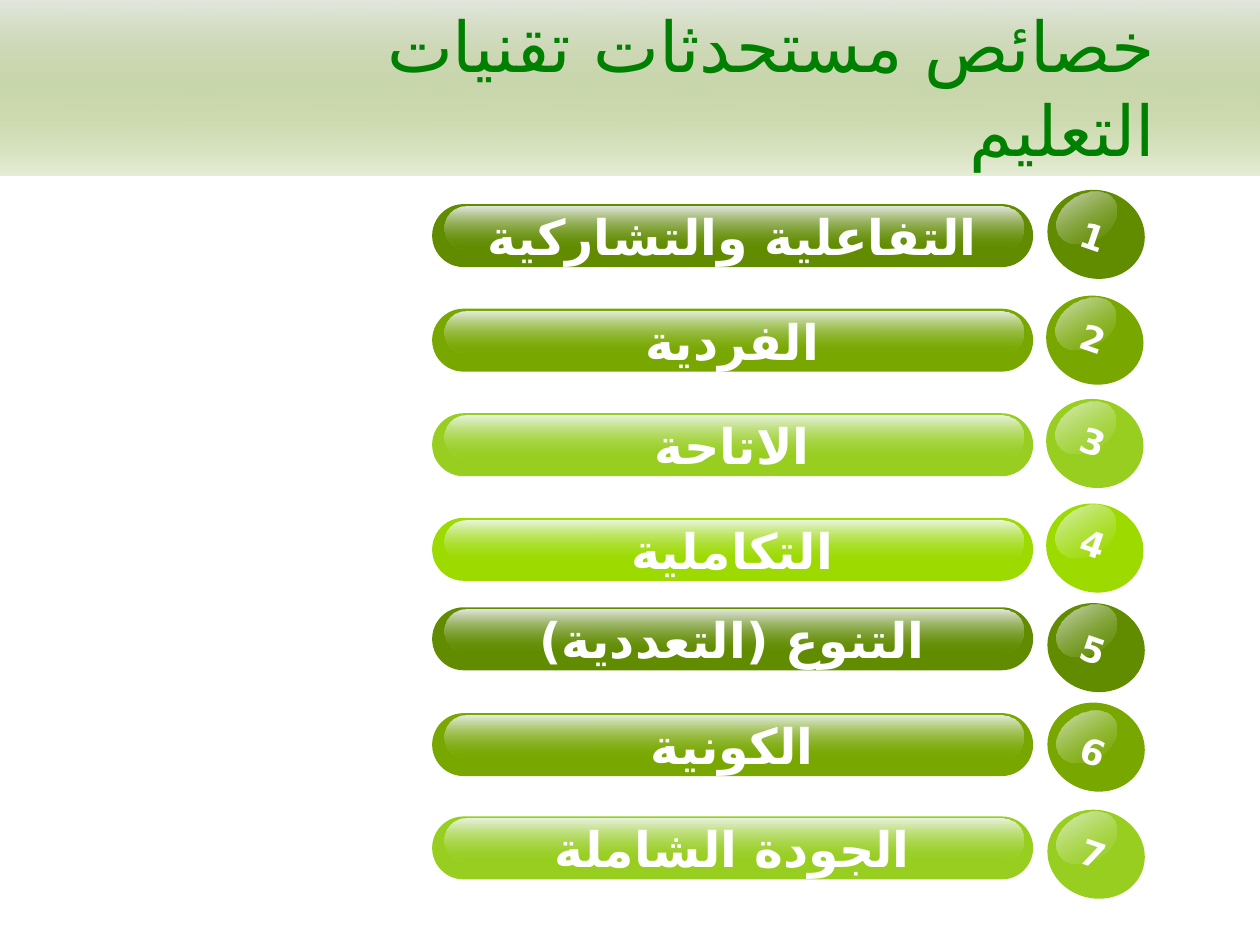
from collections import namedtuple

from lxml.etree import SubElement
from pptx import Presentation
from pptx.dml.color import RGBColor
from pptx.enum.shapes import MSO_SHAPE as Shape
from pptx.enum.text import MSO_ANCHOR as Anchor, MSO_AUTO_SIZE as AutoSize, PP_ALIGN as Align
from pptx.oxml.ns import qn
from pptx.util import Inches, Pt

ARABIC_FONT = "DejaVu Sans"  # face for the Arabic letters, which Arial and Karla may lack

Shade = namedtuple("Shade", "base light")
Row = namedtuple("Row", "text shade pill_top ball_left ball_top gloss_top number_top")

DARK = Shade("618C00", "E3E7DF")
MEDIUM = Shade("78A800", "E5ECDF")
SOFT = Shade("98CE20", "E9F3DF")
BRIGHT = Shade("9CDA00", "EAF6DF")

ROWS = [
    Row("التفاعلية والتشاركية", DARK, 1.62, 8.31, 1.51, 1.54, 1.66),
    Row("الفردية", MEDIUM, 2.45, 8.3, 2.35, 2.38, 2.47),
    Row("الاتاحة", SOFT, 3.28, 8.3, 3.17, 3.21, 3.29),
    Row("التكاملية", BRIGHT, 4.11, 8.3, 4, 4.03, 4.1),
    Row("التنوع (التعددية)", DARK, 4.82, 8.31, 4.79, 4.82, 4.94),
    Row("الكونية", MEDIUM, 5.66, 8.31, 5.58, 5.66, 5.75),
    Row("الجودة الشاملة", SOFT, 6.48, 8.31, 6.43, 6.46, 6.56),
]


def color(value):
    return RGBColor.from_string(value)


def fill_gloss(shape, shade):
    """Fade downwards from the light tint to a nearly clear base colour."""
    shape.fill.gradient()
    shape.fill.gradient_angle = 270
    for stop, value, position in zip(shape.fill.gradient_stops, (shade.light, shade.base), (0, 1)):
        stop.color.rgb = color(value)
        stop.position = position
    base = shape._element.spPr.findall(".//" + qn("a:srgbClr"))[-1]
    SubElement(base, qn("a:alpha"), val="15000")


def add_shape(slide, kind, left, top, width, height, shade, gloss=False, rotation=0, flip=False):
    shape = slide.shapes.add_shape(kind, Inches(left), Inches(top), Inches(width), Inches(height))
    shape.shadow.inherit = False
    shape.line.fill.background()
    shape.rotation = rotation
    if flip:
        shape._element.spPr.find(qn("a:xfrm")).set("flipH", "1")
    if kind == Shape.ROUNDED_RECTANGLE:
        shape.adjustments[0] = 0.5
    if gloss:
        fill_gloss(shape, shade)
    else:
        shape.fill.solid()
        shape.fill.fore_color.rgb = color(shade.base)
    return shape


def write_text(frame, text, size, font="Arial", fill="FFFFFF", bold=False, align=Align.CENTER):
    """Write one right-to-left paragraph."""
    paragraph = frame.paragraphs[0]
    paragraph.alignment = align
    paragraph._p.get_or_add_pPr().set("rtl", "1")
    run = paragraph.add_run()
    run.text = text
    run.font.size = Pt(size)
    run.font.bold = bold
    run.font.color.rgb = color(fill)
    run.font.name = font
    properties = run._r.get_or_add_rPr()
    properties.set("lang", "ar-SA")
    SubElement(properties, qn("a:cs"), typeface=ARABIC_FONT)


def add_label(slide, text, left, top, width, height, size, wrap=True, rotation=0):
    box = slide.shapes.add_textbox(Inches(left), Inches(top), Inches(width), Inches(height))
    box.rotation = rotation
    box.text_frame.word_wrap = wrap
    box.text_frame.auto_size = AutoSize.SHAPE_TO_FIT_TEXT
    write_text(box.text_frame, text, size, bold=True)


def add_header(slide):
    band = add_shape(slide, Shape.RECTANGLE, 0, 0, 10, 1.39, DARK, gloss=True)
    slide.shapes._spTree.insert(2, band._element)  # behind the title
    title = slide.shapes.title
    title.left, title.top = Inches(1.69), Inches(0.3)
    title.width, title.height = Inches(7.58), Inches(0.78)
    frame = title.text_frame
    frame.word_wrap = True
    frame.auto_size = AutoSize.NONE
    frame.vertical_anchor = Anchor.MIDDLE
    write_text(frame, "خصائص مستحدثات تقنيات التعليم", 40, font="Karla", fill="008000", align=Align.RIGHT)


def add_row(slide, number, row):
    # Pill with its gloss and caption
    pill, ball = Shape.ROUNDED_RECTANGLE, Shape.OVAL
    add_shape(slide, pill, 3.43, row.pill_top, 4.77, 0.5, row.shade)
    add_shape(slide, pill, 3.53, row.pill_top + 0.02, 4.59, 0.33, row.shade, gloss=True)
    add_label(slide, row.text, 3.67, row.pill_top - 0.03, 4.28, 0.57, 28)

    # Tilted ball with its gloss and number
    add_shape(slide, ball, row.ball_left, row.ball_top, 0.78, 0.7, row.shade, rotation=16.8, flip=True)
    add_shape(slide, ball, row.ball_left + 0.06, row.gloss_top, 0.51, 0.37, row.shade,
              gloss=True, rotation=328.6, flip=True)
    add_label(slide, str(number), 8.51, row.number_top, 0.36, 0.44, 20, wrap=False, rotation=19.1)


def main():
    presentation = Presentation()
    presentation.slide_width, presentation.slide_height = Inches(10), Inches(7.5)
    slide = presentation.slides.add_slide(presentation.slide_layouts[5])
    add_header(slide)
    for number, row in enumerate(ROWS, start=1):
        add_row(slide, number, row)
    presentation.save("out.pptx")


if __name__ == "__main__":
    main()
